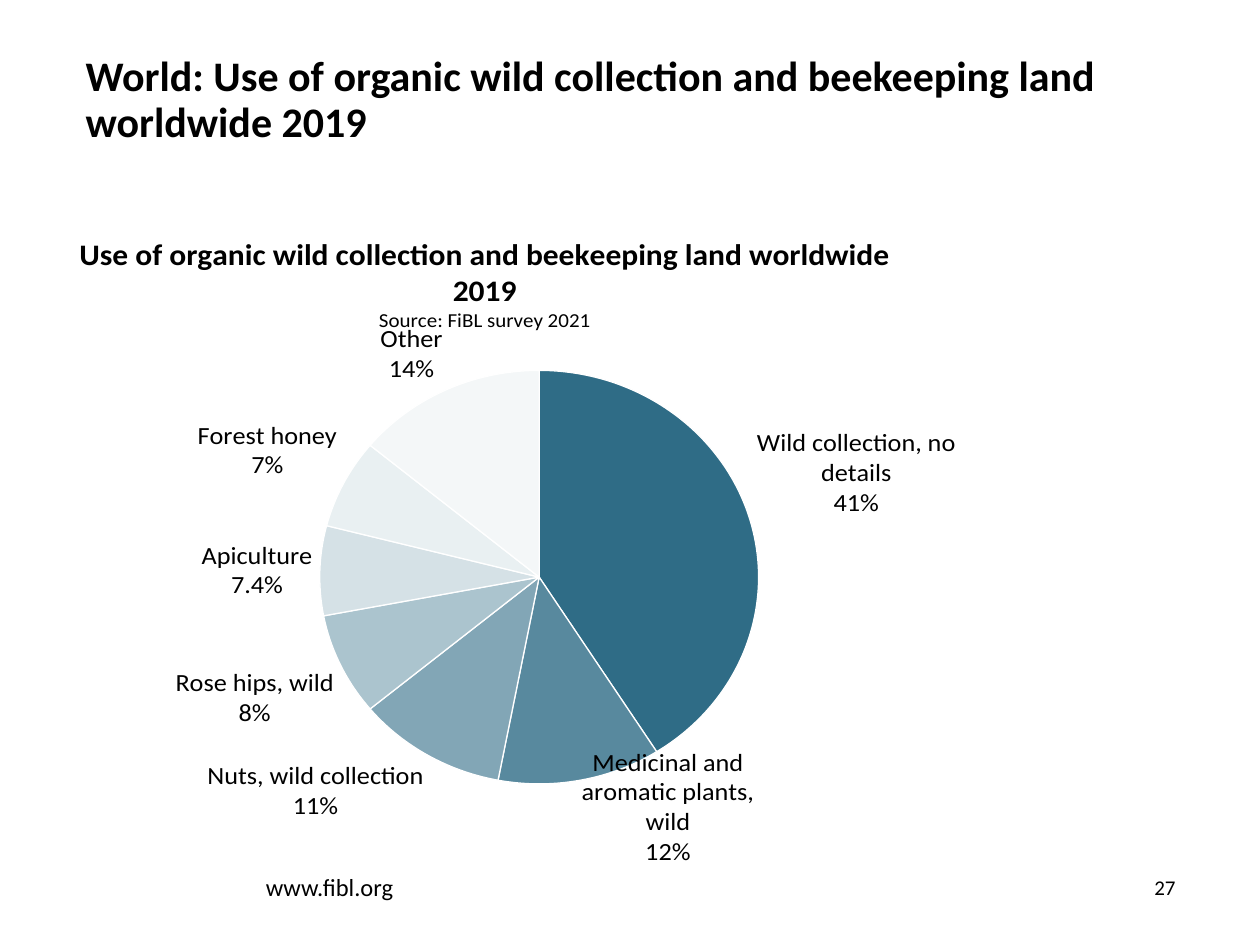
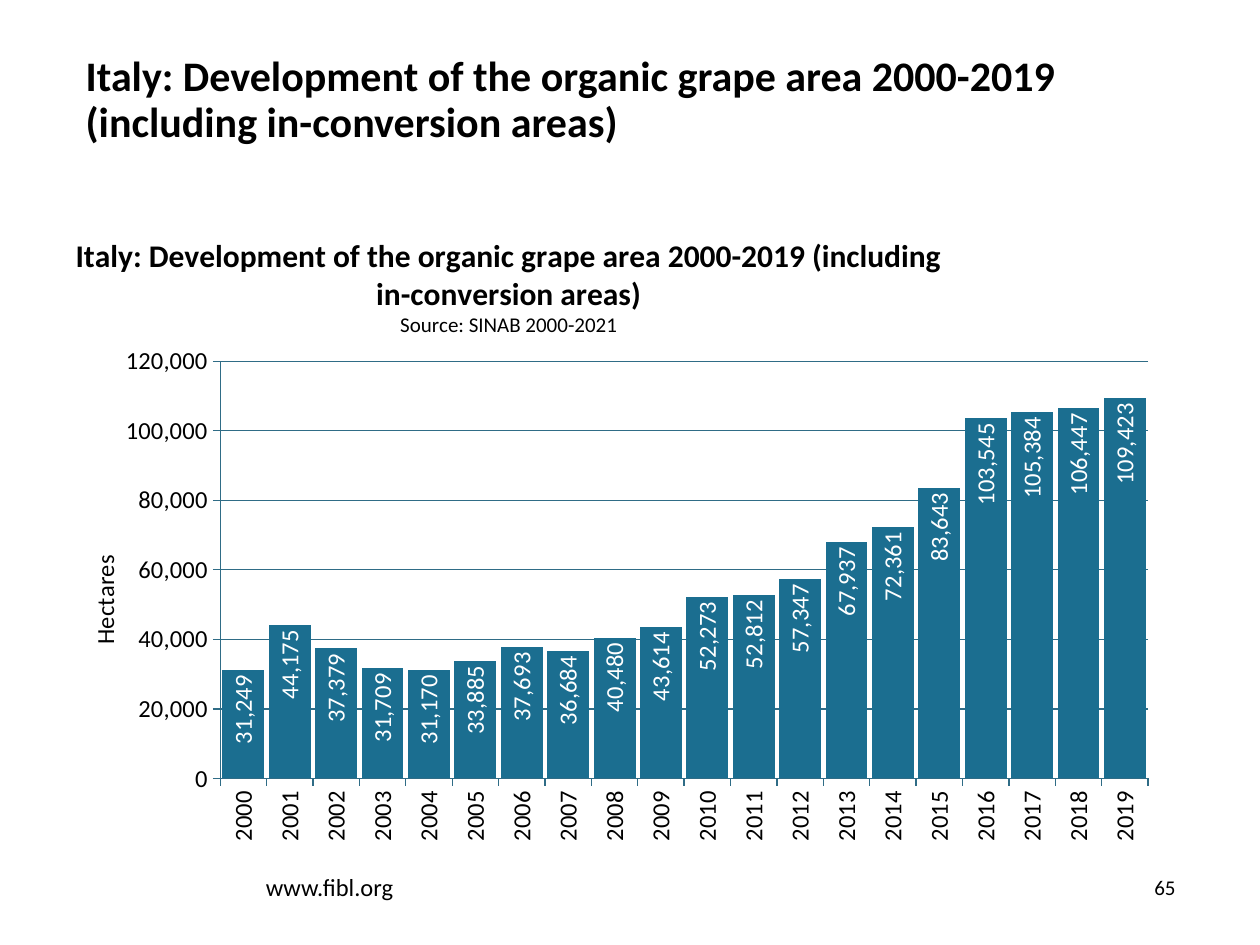
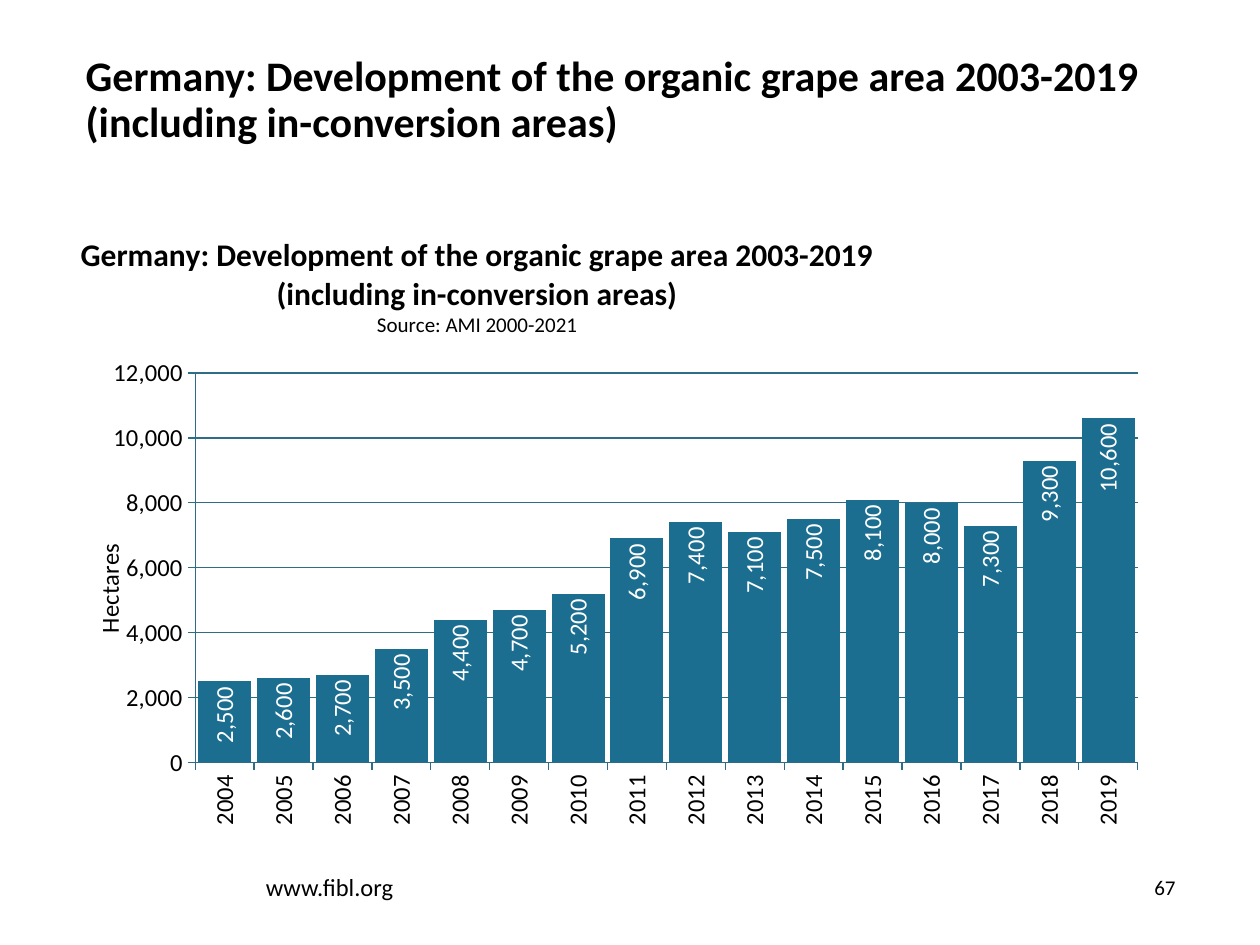
from dataclasses import dataclass
from lxml.etree import SubElement
from pptx import Presentation
from pptx.chart.data import CategoryChartData
from pptx.dml.color import RGBColor
from pptx.enum.chart import XL_CHART_TYPE, XL_LABEL_POSITION, XL_TICK_MARK
from pptx.enum.text import MSO_ANCHOR, MSO_AUTO_SIZE, PP_ALIGN
from pptx.oxml import parse_xml
from pptx.oxml.ns import nsdecls, qn
from pptx.util import Inches, Pt


@dataclass(frozen=True)
class Theme:
    font: str = "Calibri"
    black: RGBColor = RGBColor(0, 0, 0)
    white: RGBColor = RGBColor(255, 255, 255)
    blue: RGBColor = RGBColor(0x1B, 0x6E, 0x90)
    teal: RGBColor = RGBColor(0x2F, 0x6C, 0x86)
    head: int = 24
    title: int = 18
    label: int = 15
    axis: int = 14
    note: int = 12


look = Theme()


def write(para, words, size=look.axis, bold=False, color=look.black, align=None):
    run = para.add_run()
    run.text = words
    run.font.name, run.font.size, run.font.bold = look.font, Pt(size), bold
    run.font.color.rgb = color
    if align is not None:
        para.alignment = align


def pin(node, index, **place):
    """Give a chart part a fixed place, in fractions of the chart."""
    for old in node.findall(qn("c:layout")):
        node.remove(old)
    modes = '<c:layoutTarget val="inner"/>' if "w" in place else ""
    modes += '<c:xMode val="edge"/><c:yMode val="edge"/>'
    sizes = "".join(f'<c:{key} val="{val}"/>' for key, val in place.items())
    node.insert(index, parse_xml(
        f'<c:layout {nsdecls("c")}><c:manualLayout>{modes}{sizes}'
        "</c:manualLayout></c:layout>"))


# Content
uses = {"Wild collection, no details": 41, "Medicinal and aromatic plants, wild": 12,
        "Nuts, wild collection": 11, "Rose hips, wild": 8, "Apiculture": 7,
        "Forest honey": 7, "Other": 14}
italy = [31249, 44175, 37379, 31709, 31170, 33885, 37693, 36684, 40480, 43614,
         52273, 52812, 57347, 67937, 72361, 83643, 103545, 105384, 106447, 109423]
german = [2500, 2600, 2700, 3500, 4400, 4700, 5200, 6900, 7400, 7100, 7500,
          8100, 8000, 7300, 9300, 10600]
fades = [100, 80, 60, 40, 20, 10, 5]
grape = "Development of the organic grape area"
pages = [
    dict(num=27, head="World: Use of organic wild collection and beekeeping land worldwide 2019",
         name="Use of organic wild collection and beekeeping land worldwide 2019",
         source="Source: FiBL survey 2021", data=uses, top=None,
         at=(0.6, 1.78, 8.73, 5.41), plot=(0.222, 0.222, 0.399, 0.655)),
    dict(num=65, head=f"Italy: {grape} 2000-2019 (including in-conversion areas)",
         source="Source: SINAB 2000-2021", top=120000,
         data={str(2000 + i): val for i, val in enumerate(italy)},
         at=(0.57, 1.78, 9.06, 5.08), plot=(0.13, 0.214, 0.813, 0.652)),
    dict(num=67, head=f"Germany: {grape} 2003-2019 (including in-conversion areas)",
         source="Source: AMI 2000-2021", top=12000,
         data={str(2004 + i): val for i, val in enumerate(german)},
         at=(0.61, 1.78, 8.78, 4.9), plot=(0.107, 0.241, 0.852, 0.631)),
]

deck = Presentation()
deck.slide_width, deck.slide_height = Inches(10), Inches(7.5)

for page in pages:
    slide = deck.slides.add_slide(deck.slide_layouts[5])

    # Heading
    head = slide.shapes.title
    head.left, head.top, head.width, head.height = map(Inches, (0.68, 0.44, 8.65, 0.69))
    frame = head.text_frame
    frame.margin_left = frame.margin_right = frame.margin_top = frame.margin_bottom = 0
    frame.vertical_anchor, frame.auto_size = MSO_ANCHOR.TOP, MSO_AUTO_SIZE.NONE
    frame.paragraphs[0].line_spacing = 0.9
    write(frame.paragraphs[0], page["head"], size=look.head, bold=True, align=PP_ALIGN.LEFT)

    # Footer and page number
    for words, at, size, align in [
            ("www.fibl.org", (2.11, 6.86, 2.99, 0.34), look.axis, PP_ALIGN.LEFT),
            (str(page["num"]), (8.47, 6.8, 0.86, 0.39), look.note, PP_ALIGN.RIGHT)]:
        frame = slide.shapes.add_textbox(*map(Inches, at)).text_frame
        frame.word_wrap, frame.vertical_anchor = True, MSO_ANCHOR.BOTTOM
        frame.margin_left = frame.margin_right = 0
        write(frame.paragraphs[0], words, size=size, align=align)

    # Chart with its title and plot area
    data = CategoryChartData()
    data.categories = list(page["data"])
    data.add_series("Series 1", list(page["data"].values()))
    bars = page["top"] is not None
    kind = XL_CHART_TYPE.COLUMN_CLUSTERED if bars else XL_CHART_TYPE.PIE
    chart = slide.shapes.add_chart(kind, *map(Inches, page["at"]), data).chart
    chart.has_legend = False
    chart.font.name, chart.font.size = look.font, Pt(look.title)
    chart.font.color.rgb = look.black
    frame = chart.chart_title.text_frame
    write(frame.paragraphs[0], page.get("name", page["head"]), size=look.title,
          bold=True, align=PP_ALIGN.CENTER)
    write(frame.add_paragraph(), page["source"], size=look.note, align=PP_ALIGN.CENTER)
    root = chart.element
    pin(root.xpath("c:chart/c:title")[0], 1, x=0.0, y=0.01)
    pin(root.xpath(".//c:plotArea")[0], 0, **dict(zip("xywh", page["plot"])))

    # Data labels
    plot = chart.plots[0]
    plot.vary_by_categories = not bars
    series = plot.series[0]
    tags = series.data_labels
    tags.font.name = look.font
    tags.font.size = Pt(look.axis if bars else look.label)
    tags.font.color.rgb = look.white if bars else look.black
    tags.number_format, tags.number_format_is_linked = "#,##0" if bars else "0%", False
    tags.show_value = bars
    tags.position = XL_LABEL_POSITION.INSIDE_END if bars else XL_LABEL_POSITION.OUTSIDE_END

    if not bars:
        # Slices fade from full colour to almost clear
        tags.show_percentage = tags.show_category_name = True
        mark = parse_xml(f'<c:separator {nsdecls("c")}>\n</c:separator>')
        root.xpath(".//c:ser/c:dLbls/c:showBubbleSize")[0].addnext(mark)
        for i, fade in enumerate(fades):
            form = series.points[i].format
            form.fill.solid()
            form.fill.fore_color.rgb = look.teal
            form.line.color.rgb, form.line.width = look.white, Pt(0.75)
            tint = root.xpath(f".//c:dPt[c:idx/@val={i}]/c:spPr/a:solidFill/a:srgbClr")[0]
            SubElement(tint, qn("a:alpha")).set("val", str(fade * 1000))
        tag = series.points[4].data_label
        write(tag.text_frame.paragraphs[0], "Apiculture", size=look.label)
        write(tag.text_frame.add_paragraph(), "7.4%", size=look.label)
        tag.position = XL_LABEL_POSITION.OUTSIDE_END
        continue

    # Columns and axes
    plot.gap_width = 11
    series.format.fill.solid()
    series.format.fill.fore_color.rgb = look.blue
    years, area = chart.category_axis, chart.value_axis
    for axis in (years, area):
        axis.major_tick_mark = XL_TICK_MARK.OUTSIDE
        axis.tick_labels.font.name = look.font
        axis.tick_labels.font.size = Pt(look.axis)
        axis.format.line.color.rgb, axis.format.line.width = look.teal, Pt(0.75)
    area.minimum_scale, area.maximum_scale = 0, page["top"]
    area.major_unit = page["top"] / 6
    area.tick_labels.number_format = "#,##0"
    area.tick_labels.number_format_is_linked = False
    grid = area.major_gridlines.format.line
    grid.color.rgb, grid.width = look.teal, Pt(0.75)
    write(area.axis_title.text_frame.paragraphs[0], "Hectares")
    pin(root.xpath(".//c:valAx/c:title")[0], 1, x=0.01, y=0.51)
    for body in root.xpath(".//c:ser/c:dLbls/c:txPr/a:bodyPr | .//c:catAx/c:txPr/a:bodyPr"):
        body.set("rot", "-5400000")
        body.set("vert", "horz")

deck.save("out.pptx")
